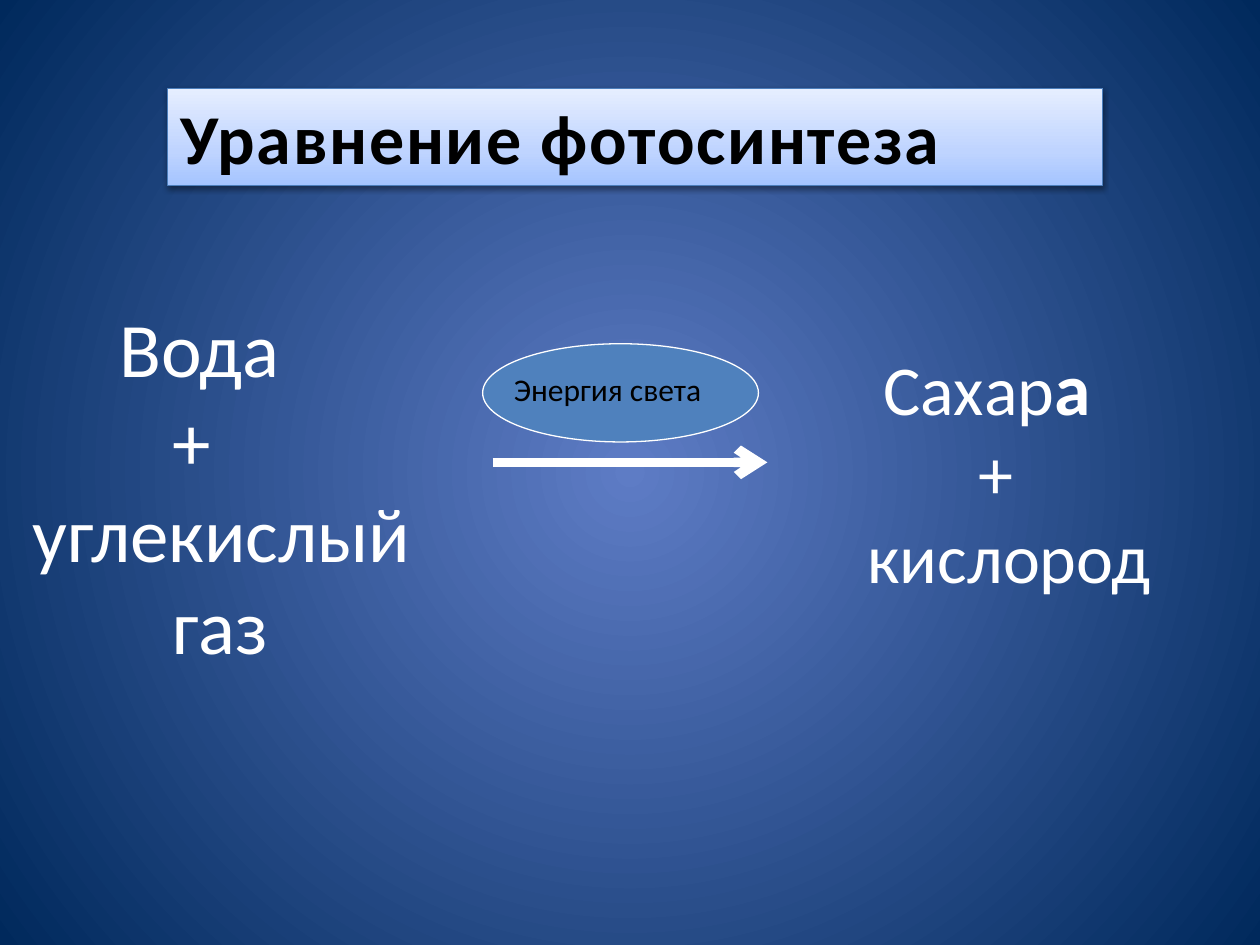
from pptx import Presentation
from pptx.dml.color import RGBColor
from pptx.enum.shapes import MSO_CONNECTOR, MSO_SHAPE
from pptx.enum.text import MSO_ANCHOR, PP_ALIGN
from pptx.oxml import parse_xml
from pptx.oxml.ns import nsdecls, qn
from pptx.util import Cm, Pt

WHITE = RGBColor(0xFF, 0xFF, 0xFF)
BLACK = RGBColor(0x00, 0x00, 0x00)
BLUE = RGBColor(0x4F, 0x81, 0xBD)
EDGE = RGBColor(0x4B, 0x7E, 0xBC)
GLOW = RGBColor(0x5E, 0x7C, 0xC5)
NAVY = RGBColor(0x00, 0x29, 0x5C)
SKY = RGBColor(0xA4, 0xC4, 0xFF)
PALE = RGBColor(0xBF, 0xD4, 0xFF)
MIST = RGBColor(0xE6, 0xEE, 0xFF)


def write(par, text, size=40, color=WHITE, bold=False, space=0, indent=0):
    """Add a run to a paragraph; indent is the left margin in cm."""
    run = par.add_run()
    run.text = text
    font = run.font
    font.name, font.size, font.bold = "Calibri", Pt(size), bold
    font.color.rgb = color
    if space:
        run._r.get_or_add_rPr().set("spc", str(space * 100))
    if indent:
        par._p.get_or_add_pPr().set("marL", str(Cm(indent)))


def blend(root, stops, shade):
    """Replace the gradient inside root with new stops and shading XML."""
    marks = "".join(
        f'<a:gs pos="{pos * 1000}"><a:srgbClr val="{color}"/></a:gs>'
        for pos, color in stops)
    old = root.find(".//" + qn("a:gradFill"))
    new = parse_xml(f'<a:gradFill {nsdecls("a")} rotWithShape="1">'
                    f'<a:gsLst>{marks}</a:gsLst>{shade}</a:gradFill>')
    old.getparent().replace(old, new)


deck = Presentation()
deck.slide_width, deck.slide_height = Cm(25.4), Cm(19.05)
slide = deck.slides.add_slide(deck.slide_layouts[5])
shapes = slide.shapes

# Background
slide.background.fill.gradient()
blend(slide.element, [(0, GLOW), (100, NAVY)],
      '<a:path path="circle"><a:fillToRect l="50000" t="50000" '
      'r="50000" b="50000"/></a:path>')

# Title
title = shapes.title
title.left, title.top = Cm(3.38), Cm(1.78)
title.width, title.height = Cm(18.85), Cm(1.96)
title.fill.gradient()
blend(title.element, [(0, SKY), (35, PALE), (100, MIST)],
      '<a:lin ang="16200000" scaled="0"/>')
title.line.color.rgb, title.line.width = EDGE, Pt(0.75)
title.element.spPr.append(parse_xml(
    f'<a:effectLst {nsdecls("a")}><a:outerShdw blurRad="{Pt(3.1)}" '
    f'dist="{Pt(1.6)}" dir="5400000" rotWithShape="0"><a:srgbClr val="{BLACK}">'
    '<a:alpha val="38000"/></a:srgbClr></a:outerShdw></a:effectLst>'))
frame = title.text_frame
frame.word_wrap = True
frame.vertical_anchor = MSO_ANCHOR.MIDDLE
frame.paragraphs[0].alignment = PP_ALIGN.LEFT
write(frame.paragraphs[0], "Уравнение фотосинтеза", color=BLACK, bold=True,
      space=1)

# Light energy
oval = shapes.add_shape(MSO_SHAPE.OVAL, Cm(9.73), Cm(6.93), Cm(5.56), Cm(1.98))
oval.shadow.inherit = False
oval.fill.solid()
oval.fill.fore_color.rgb = BLUE
oval.line.color.rgb, oval.line.width = WHITE, Pt(0.75)

# Reaction arrow
arrow = shapes.add_connector(MSO_CONNECTOR.STRAIGHT, Cm(9.93), Cm(9.32),
                             Cm(15.47), Cm(9.32))
arrow.line.color.rgb, arrow.line.width = WHITE, Pt(5.5)
arrow.line._get_or_add_ln().append(
    parse_xml(f'<a:tailEnd {nsdecls("a")} type="arrow"/>'))
arrow._element.spPr.append(parse_xml(f'<a:effectLst {nsdecls("a")}/>'))

# Both sides of the equation and the label: box, size, colour, (line, indent)
texts = [
    ((0.41, 5.94, 9.12, 7.77), 44, WHITE,
     [("Вода", 1.75), ("+", 2.81), ("углекислый", 0), ("газ", 2.81)]),
    ((16.28, 6.76, 8.33, 5.46), 40, WHITE,
     [("Сахар", 1.28), ("+", 3.19), ("кислород", 0.96)]),
    ((10.11, 7.34, 4.95, 1.02), 18, BLACK, [("Энергия света", 0)]),
]
for box, size, color, lines in texts:
    frame = shapes.add_textbox(*map(Cm, box)).text_frame
    frame.word_wrap = True
    for i, (text, indent) in enumerate(lines):
        par = frame.add_paragraph() if i else frame.paragraphs[0]
        write(par, text, size=size, color=color, indent=indent)
        if text == "Сахар":
            write(par, "а", size=42, bold=True)

deck.save("out.pptx")
